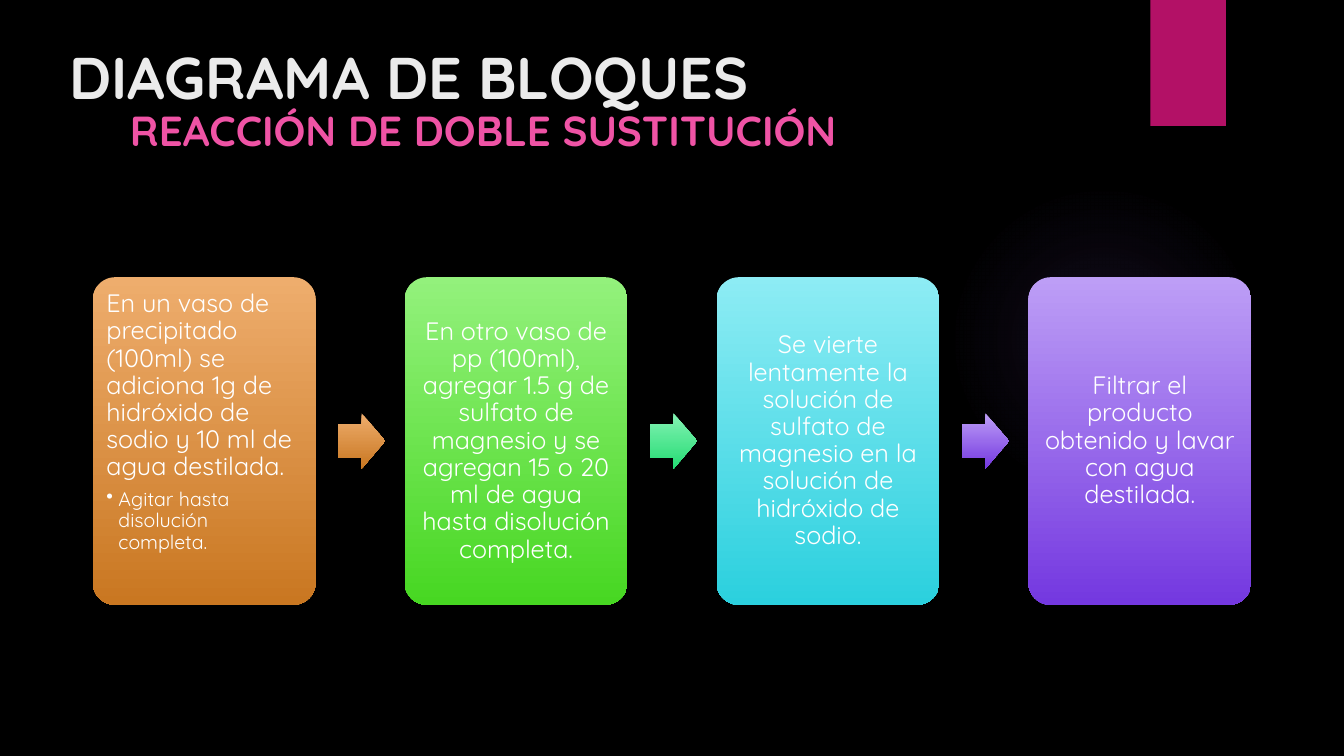
import pptx
import pptx.util
import pptx.dml.color
import pptx.enum.shapes
import pptx.enum.text
import pptx.oxml
import pptx.oxml.ns

Inches, Pt = pptx.util.Inches, pptx.util.Pt
RGBColor = pptx.dml.color.RGBColor
SHAPE = pptx.enum.shapes.MSO_SHAPE
ANCHOR = pptx.enum.text.MSO_ANCHOR
ALIGN = pptx.enum.text.PP_ALIGN

FONT = "Quicksand"
BLACK = RGBColor(0x00, 0x00, 0x00)
WHITE = RGBColor(0xFF, 0xFF, 0xFF)
TITLE_GREY = RGBColor(0xEB, 0xEB, 0xEB)
PINK = RGBColor(0xEF, 0x53, 0xA5)
MAGENTA = RGBColor(0xB3, 0x11, 0x66)
GLOW_VIOLET = RGBColor(0x9B, 0x6B, 0xF2)
# Gradients run from top colour to bottom colour
ORANGE = (RGBColor(0xEE, 0xAD, 0x6D), RGBColor(0xC9, 0x77, 0x21))
GREEN = (RGBColor(0x93, 0xF1, 0x7C), RGBColor(0x47, 0xD7, 0x22))
MINT = (RGBColor(0x84, 0xF2, 0xB3), RGBColor(0x24, 0xDC, 0x74))
CYAN = (RGBColor(0x8D, 0xEC, 0xF4), RGBColor(0x2B, 0xD0, 0xDE))
VIOLET = (RGBColor(0xBD, 0x9E, 0xF6), RGBColor(0x74, 0x38, 0xE0))

# Each step: card colours, text, sub-point, colours of the arrow that follows
STEPS = [
    (ORANGE, "En un vaso de precipitado (100ml) se adiciona 1g de hidróxido de "
     "sodio y 10 ml de agua destilada.", "Agitar hasta disolución completa.", ORANGE),
    (GREEN, "En otro vaso de pp (100ml), agregar 1.5 g de sulfato de magnesio y se "
     "agregan 15 o 20 ml de agua hasta disolución completa.", None, MINT),
    (CYAN, "Se vierte lentamente la solución de sulfato de magnesio en la solución "
     "de hidróxido de sodio.", None, VIOLET),
    (VIOLET, "Filtrar el producto obtenido y lavar con agua destilada.", None, None),
]


def add_plain_shape(slide, kind, left, top, width, height, adjustments=()):
    shape = slide.shapes.add_shape(
        kind, Inches(left), Inches(top), Inches(width), Inches(height))
    shape.shadow.inherit = False
    shape.line.fill.background()
    for index, value in enumerate(adjustments):
        shape.adjustments[index] = value
    return shape


def fill_downward(shape, colours):
    shape.fill.gradient()
    shape.fill.gradient_angle = 270
    for stop, colour in zip(shape.fill.gradient_stops, colours):
        stop.color.rgb = colour


def add_run(paragraph, text, size, colour, bold=False):
    run = paragraph.add_run()
    run.text = text
    run.font.name = FONT
    run.font.size = Pt(size)
    run.font.bold = bold
    run.font.color.rgb = colour


def add_decoration(slide):
    # Faint radial glow
    glow = add_plain_shape(slide, SHAPE.OVAL, 9.41, 1.83, 3.08, 3.08)
    stops = "".join(
        f'<a:gs pos="{position * 1000}"><a:srgbClr val="{GLOW_VIOLET}">'
        f'<a:alpha val="{alpha * 1000}"/></a:srgbClr></a:gs>'
        for position, alpha in ((0, 7), (36, 6), (69, 0)))
    gradient = pptx.oxml.parse_xml(
        f'<a:gradFill {pptx.oxml.ns.nsdecls("a")}><a:gsLst>{stops}</a:gsLst>'
        '<a:path path="circle"><a:fillToRect l="50000" t="50000" r="50000" b="50000"/>'
        '</a:path></a:gradFill>')
    glow.fill.background()
    no_fill = glow.element.spPr.find(pptx.oxml.ns.qn("a:noFill"))
    glow.element.spPr.replace(no_fill, gradient)

    # Corner tab
    tab = add_plain_shape(slide, SHAPE.RECTANGLE, 11.41, 0, 0.75, 1.25)
    tab.fill.solid()
    tab.fill.fore_color.rgb = MAGENTA


def add_heading(slide, text, box, size, colour, anchor):
    heading = slide.shapes.add_textbox(*(Inches(length) for length in box))
    frame = heading.text_frame
    frame.word_wrap = True
    frame.vertical_anchor = anchor
    add_run(frame.paragraphs[0], text, size, colour, bold=True)


def add_card(slide, left, top, width, height, colours, text, sub_point):
    card = add_plain_shape(
        slide, SHAPE.ROUNDED_RECTANGLE, left, top, width, height, [0.1])
    fill_downward(card, colours)
    frame = card.text_frame
    frame.word_wrap = True
    frame.margin_left = frame.margin_right = Inches(0.07)
    frame.margin_top = frame.margin_bottom = Inches(0.07)
    frame.vertical_anchor = ANCHOR.TOP if sub_point else ANCHOR.MIDDLE
    paragraph = frame.paragraphs[0]
    paragraph.alignment = ALIGN.LEFT if sub_point else ALIGN.CENTER
    paragraph.line_spacing = 0.9
    add_run(paragraph, text, 18, WHITE)
    if sub_point:
        paragraph.space_after = Pt(6)
        bullet = frame.add_paragraph()
        bullet.level = 1
        bullet.alignment = ALIGN.LEFT
        bullet.line_spacing = 0.9
        properties = bullet._p.get_or_add_pPr()
        properties.set("marL", str(Inches(0.12)))
        properties.set("indent", str(Inches(-0.12)))
        properties.append(pptx.oxml.parse_xml(
            f'<a:buChar {pptx.oxml.ns.nsdecls("a")} char="•"/>'))
        add_run(bullet, sub_point, 14, WHITE)


def add_process(slide, left, top, width, height):
    card_width = 2.21
    arrow_width, arrow_height = 0.47, 0.55
    pitch = (width - card_width) / (len(STEPS) - 1)
    for index, (colours, text, sub_point, arrow_colours) in enumerate(STEPS):
        card_left = left + index * pitch
        add_card(slide, card_left, top, card_width, height, colours, text, sub_point)
        if arrow_colours:
            arrow = add_plain_shape(
                slide, SHAPE.RIGHT_ARROW, card_left + 1.1 * card_width,
                top + (height - arrow_height) / 2, arrow_width, arrow_height, [0.6, 0.5])
            fill_downward(arrow, arrow_colours)


def main():
    presentation = pptx.Presentation()
    presentation.slide_width = Inches(13.33)
    presentation.slide_height = Inches(7.5)
    slide = presentation.slides.add_slide(presentation.slide_layouts[6])
    slide.background.fill.solid()
    slide.background.fill.fore_color.rgb = BLACK

    add_decoration(slide)
    add_heading(slide, "DIAGRAMA DE BLOQUES", (0.59, 0.35, 10.29, 1.53),
                42, TITLE_GREY, ANCHOR.TOP)
    add_heading(slide, "REACCIÓN DE DOBLE SUSTITUCIÓN", (1.19, 0.96, 10.31, 0.63),
                30, PINK, ANCHOR.BOTTOM)
    add_process(slide, 0.92, 2.75, 11.49, 3.25)
    presentation.save("out.pptx")


if __name__ == "__main__":
    main()
